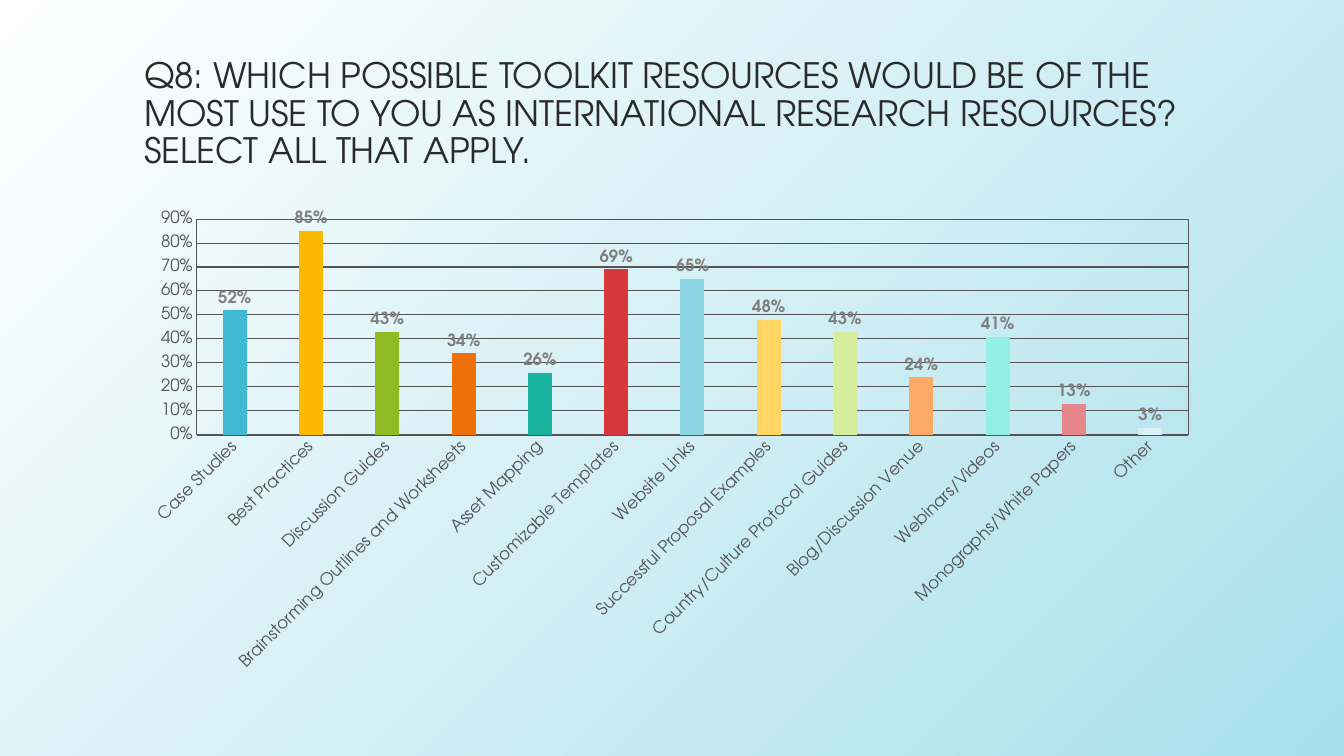
from pptx import Presentation
from pptx.chart.data import CategoryChartData
from pptx.dml.color import RGBColor
from pptx.enum.chart import XL_CHART_TYPE, XL_LABEL_POSITION, XL_TICK_MARK
from pptx.enum.text import MSO_ANCHOR, MSO_AUTO_SIZE, PP_ALIGN
from pptx.oxml import parse_xml
from pptx.oxml.ns import nsdecls, qn
from pptx.util import Inches, Pt

COLUMN = XL_CHART_TYPE.COLUMN_CLUSTERED
OUTSIDE_END = XL_LABEL_POSITION.OUTSIDE_END
NO_TICK = XL_TICK_MARK.NONE
BOTTOM = MSO_ANCHOR.BOTTOM
NO_AUTOFIT = MSO_AUTO_SIZE.NONE
LEFT = PP_ALIGN.LEFT

FONT = "TeX Gyre Adventor"
COLORS = {
    "title": "2A2A2A",
    "axis": "545454",
    "label": "7F7F7F",
    "bg_start": "FFFFFF",
    "bg_end": "A9E0EB",
}
TITLE = (
    "Q8: WHICH POSSIBLE TOOLKIT RESOURCES WOULD BE OF THE MOST USE TO YOU "
    "AS INTERNATIONAL RESEARCH RESOURCES? SELECT ALL THAT APPLY."
)
RESOURCES = [
    ("Case Studies", 0.52, "40BAD2"),
    ("Best Practices", 0.85, "FAB900"),
    ("Discussion Guides", 0.43, "90BB23"),
    ("Brainstorming Outlines and Worksheets", 0.34, "EE7008"),
    ("Asset Mapping", 0.26, "1AB39F"),
    ("Customizable Templates", 0.69, "D5393D"),
    ("Website Links", 0.65, "8CD6E4"),
    ("Successful Proposal Examples", 0.48, "FFD663"),
    ("Country/Culture Protocol Guides", 0.43, "D7ED9E"),
    ("Blog/Discussion Venue", 0.24, "FAA966"),
    ("Webinars/Videos", 0.41, "94F0E4"),
    ("Monographs/White Papers", 0.13, "E6888B"),
    ("Other", 0.03, "D9F1F6"),
]
TITLE_BOX = (1.33, 0.3, 10.67, 1.45)
CHART_BOX = (1.33, 2, 10.67, 4.75)


def style_font(font, size, color, bold=False):
    """Apply the slide's typeface with a size, colour and weight."""
    font.name = FONT
    font.size = Pt(size)
    font.bold = bold
    font.color.rgb = RGBColor.from_string(color)


def style_line(line, width):
    """Give a chart line the axis colour and a width in points."""
    line.color.rgb = RGBColor.from_string(COLORS["axis"])
    line.width = Pt(width)


def paint_background(page):
    """Fill the page with a diagonal gradient."""
    fill = page.background.fill
    fill.gradient()
    fill.gradient_angle = 315
    for stop, position, name in zip(fill.gradient_stops, (0, 1), ("bg_start", "bg_end")):
        stop.position = position
        stop.color.rgb = RGBColor.from_string(COLORS[name])


def place_title(page, box):
    """Move the title placeholder to its box and format its text."""
    title = page.shapes.title
    title.left, title.top, title.width, title.height = map(Inches, box)
    frame = title.text_frame
    frame.text = TITLE
    frame.word_wrap = True
    frame.auto_size = NO_AUTOFIT
    frame.vertical_anchor = BOTTOM
    para = frame.paragraphs[0]
    para.alignment = LEFT
    para.line_spacing = 0.9
    style_font(para.runs[0].font, 25, COLORS["title"])


def outline_plot(chart):
    """Draw a thin outline around the unfilled plot area."""
    plot_area = chart._chartSpace.find(".//" + qn("c:plotArea"))
    plot_area.append(parse_xml(
        f"<c:spPr {nsdecls('c', 'a')}><a:noFill/><a:ln w=\"{Pt(0.75)}\"><a:solidFill>"
        f"<a:srgbClr val=\"{COLORS['axis']}\"/></a:solidFill></a:ln></c:spPr>"
    ))


def format_axes(chart):
    """Style both axes and slant the category names."""
    for axis in (chart.category_axis, chart.value_axis):
        axis.major_tick_mark = axis.minor_tick_mark = NO_TICK
        style_font(axis.tick_labels.font, 12, COLORS["axis"])
    category_axis, value_axis = chart.category_axis, chart.value_axis
    style_line(category_axis.format.line, 1)
    body = category_axis._element.find(qn("c:txPr")).find(qn("a:bodyPr"))
    body.set("rot", "-2700000")
    body.set("vert", "horz")
    value_axis.minimum_scale, value_axis.maximum_scale = 0, 0.9
    value_axis.major_unit = 0.1
    value_axis.tick_labels.number_format = "0%"
    value_axis.tick_labels.number_format_is_linked = False
    value_axis.format.line.fill.background()
    value_axis.has_major_gridlines = True
    style_line(value_axis.major_gridlines.format.line, 0.75)


def format_columns(plot):
    """Colour each column and label it with its percentage."""
    plot.gap_width = 219
    plot.overlap = -27
    plot.vary_by_categories = False
    series = plot.series[0]
    for index, (_, _, color) in enumerate(RESOURCES):
        fill = series.points[index].format.fill
        fill.solid()
        fill.fore_color.rgb = RGBColor.from_string(color)
    labels = series.data_labels
    labels.show_value = True
    labels.number_format = "0%"
    labels.number_format_is_linked = False
    labels.position = OUTSIDE_END
    style_font(labels.font, 12, COLORS["label"], bold=True)


def place_chart(page, box):
    """Draw the column chart of resource choices in its box."""
    data = CategoryChartData(number_format="0%")
    data.categories = [name for name, _, _ in RESOURCES]
    data.add_series("Series 1", [share for _, share, _ in RESOURCES])
    chart = page.shapes.add_chart(COLUMN, *map(Inches, box), data).chart
    chart.has_legend = False
    chart.has_title = False
    style_font(chart.font, 10, COLORS["axis"])
    format_axes(chart)
    format_columns(chart.plots[0])
    outline_plot(chart)


def main():
    """Build the survey slide and save it."""
    deck = Presentation()
    deck.slide_width, deck.slide_height = Inches(13.33), Inches(7.5)
    page = deck.slides.add_slide(deck.slide_layouts[5])
    paint_background(page)
    place_title(page, TITLE_BOX)
    place_chart(page, CHART_BOX)
    deck.save("out.pptx")


if __name__ == "__main__":
    main()
